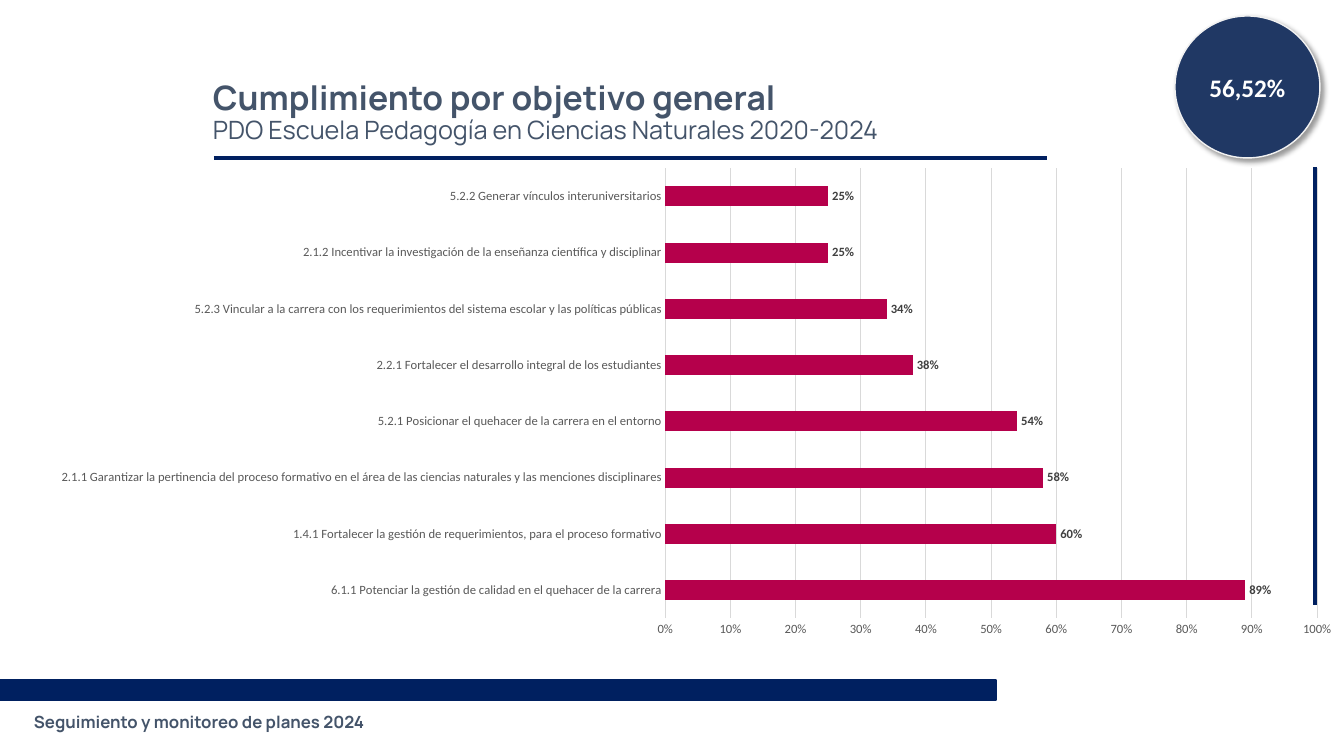
from lxml import etree
from pptx import Presentation
from pptx import util as u
from pptx.chart.data import CategoryChartData
from pptx.dml.color import RGBColor
from pptx.enum import chart as charts, shapes, text
from pptx.oxml import parse_xml
from pptx.oxml.ns import nsdecls, qn

FOOTER = "Seguimiento y monitoreo de planes 2024"
TITLE = "Cumplimiento por objetivo general"
SUBTITLE = "PDO Escuela Pedagogía en Ciencias Naturales 2020-2024"
TOTAL = "56,52%"
OBJECTIVES = [
    ("6.1.1 Potenciar la gestión de calidad en el quehacer de la carrera", 0.89),
    ("1.4.1 Fortalecer la gestión de requerimientos, para el proceso formativo", 0.60),
    ("2.1.1 Garantizar la pertinencia del proceso formativo en el área de las "
     "ciencias naturales y las menciones disciplinares", 0.58),
    ("5.2.1 Posicionar el quehacer de la carrera en el entorno", 0.54),
    ("2.2.1 Fortalecer el desarrollo integral de los estudiantes", 0.38),
    ("5.2.3 Vincular a la carrera con los requerimientos del sistema escolar y "
     "las políticas públicas", 0.34),
    ("2.1.2 Incentivar la investigación de la enseñanza científica y disciplinar", 0.25),
    ("5.2.2 Generar vínculos interuniversitarios", 0.25),
]
PLOT = {"x": 0.495, "y": 0.021, "w": 0.485, "h": 0.909}

NAVY = RGBColor(0x00, 0x20, 0x60)
BADGE = RGBColor(0x20, 0x38, 0x64)
BADGE_EDGE = RGBColor(0xF2, 0xF2, 0xF2)
SLATE = RGBColor(0x44, 0x54, 0x6A)
WHITE = RGBColor(0xFF, 0xFF, 0xFF)
CRIMSON = RGBColor(0xB5, 0x00, 0x4B)
GRID = RGBColor(0xD9, 0xD9, 0xD9)
AXIS_TEXT = RGBColor(0x59, 0x59, 0x59)
LABEL_TEXT = RGBColor(0x40, 0x40, 0x40)
BLACK = RGBColor(0x00, 0x00, 0x00)

EMU_PER_PX = 914400 / 100.8


def px(*lengths):
    return [u.Emu(round(length * EMU_PER_PX)) for length in lengths]


def set_font(font, name, size, color, bold=False):
    font.name, font.size, font.bold = name, u.Pt(size), bold
    font.color.rgb = color


def add_run(paragraph, words, *style):
    run = paragraph.add_run()
    run.text = words
    set_font(run.font, *style)


def add_block(slide, kind, box, fill, line=None):
    shape = slide.shapes.add_shape(kind, *px(*box))
    shape.shadow.inherit = False
    shape.fill.solid()
    shape.fill.fore_color.rgb = fill
    if line is None:
        shape.line.fill.background()
    else:
        shape.line.color.rgb = line
        shape.line.width = u.Pt(1)
    shape.text_frame.vertical_anchor = text.MSO_ANCHOR.MIDDLE
    return shape


def add_rule(slide, *ends):
    rule = slide.shapes.add_connector(shapes.MSO_CONNECTOR.STRAIGHT, *px(*ends))
    rule.line.color.rgb = NAVY
    rule.line.width = u.Pt(2.25)
    etree.SubElement(rule._element.spPr, qn("a:effectLst"))


def add_title(slide):
    frame = slide.shapes.add_textbox(*px(203, 40, 1049, 146)).text_frame
    frame.word_wrap = True
    frame.vertical_anchor = text.MSO_ANCHOR.MIDDLE
    heading, subheading = frame.paragraphs[0], frame.add_paragraph()
    heading.line_spacing = subheading.line_spacing = 0.9
    add_run(heading, TITLE, "Manrope", 24, SLATE, True)
    add_run(subheading, SUBTITLE, "Manrope", 18, SLATE)


def place_plot(chart):
    """Fix the inner plot area as fractions of the chart frame."""
    plot_area = chart._chartSpace.chart.plotArea
    for layout in plot_area.findall(qn("c:layout")):
        plot_area.remove(layout)
    parts = '<c:layoutTarget val="inner"/><c:xMode val="edge"/><c:yMode val="edge"/>'
    parts += "".join(f'<c:{key} val="{value}"/>' for key, value in PLOT.items())
    plot_area.insert(0, parse_xml(
        f'<c:layout {nsdecls("c")}><c:manualLayout>{parts}</c:manualLayout></c:layout>'))


def add_objectives_chart(slide):
    data = CategoryChartData(number_format="0%")
    data.categories = [name for name, _ in OBJECTIVES]
    data.add_series("Cumplimiento", [value for _, value in OBJECTIVES])
    chart = slide.shapes.add_chart(
        charts.XL_CHART_TYPE.BAR_CLUSTERED, *px(0, 158, 1344, 495), data).chart
    chart.has_title = chart.has_legend = False
    set_font(chart.font, "Calibri", 10, BLACK)
    place_plot(chart)

    for axis in (chart.category_axis, chart.value_axis):
        axis.major_tick_mark = axis.minor_tick_mark = charts.XL_TICK_MARK.NONE
        set_font(axis.tick_labels.font, "Calibri", 9, AXIS_TEXT)
    values = chart.value_axis
    values.minimum_scale, values.maximum_scale, values.major_unit = 0, 1, 0.1
    values.tick_labels.number_format = "0%"
    values.tick_labels.number_format_is_linked = False
    values.format.line.fill.background()
    values.has_major_gridlines = True
    for line in (chart.category_axis.format.line, values.major_gridlines.format.line):
        line.color.rgb = GRID
        line.width = u.Pt(0.75)

    plot = chart.plots[0]
    plot.gap_width = 182
    plot.vary_by_categories = False
    fill = plot.series[0].format.fill
    fill.solid()
    fill.fore_color.rgb = CRIMSON
    labels = plot.series[0].data_labels
    labels.show_value = True
    labels.position = charts.XL_LABEL_POSITION.OUTSIDE_END
    labels.number_format = "0%"
    labels.number_format_is_linked = False
    set_font(labels.font, "Calibri", 9, LABEL_TEXT, True)


def add_total_badge(slide):
    badge = add_block(slide, shapes.MSO_SHAPE.OVAL, (1175, 16, 145, 142), BADGE, BADGE_EDGE)
    effects = badge._element.spPr.find(qn("a:effectLst"))
    effects.append(parse_xml(
        f'<a:outerShdw {nsdecls("a")} blurRad="{u.Pt(4)}" dist="{u.Pt(3)}" '
        'dir="2700000" algn="tl" rotWithShape="0"><a:srgbClr val="000000">'
        '<a:alpha val="40000"/></a:srgbClr></a:outerShdw>'))
    paragraph = badge.text_frame.paragraphs[0]
    paragraph.alignment = text.PP_ALIGN.CENTER
    add_run(paragraph, TOTAL, "Calibri", 18, WHITE, True)


def main():
    presentation = Presentation()
    presentation.slide_width, presentation.slide_height = px(1344, 756)
    slide = presentation.slides.add_slide(presentation.slide_layouts[6])

    add_block(slide, shapes.MSO_SHAPE.RECTANGLE, (0, 680, 996, 20), NAVY, NAVY)
    footer = add_block(slide, shapes.MSO_SHAPE.RECTANGLE, (24, 703, 410, 38), WHITE)
    paragraph = footer.text_frame.paragraphs[0]
    paragraph.alignment = text.PP_ALIGN.LEFT
    add_run(paragraph, FOOTER, "Manrope", 12, SLATE, True)

    add_rule(slide, 214, 158, 1047, 158)
    add_title(slide)
    add_objectives_chart(slide)
    add_rule(slide, 1315, 167, 1315, 605)
    add_total_badge(slide)
    presentation.save("out.pptx")


if __name__ == "__main__":
    main()
